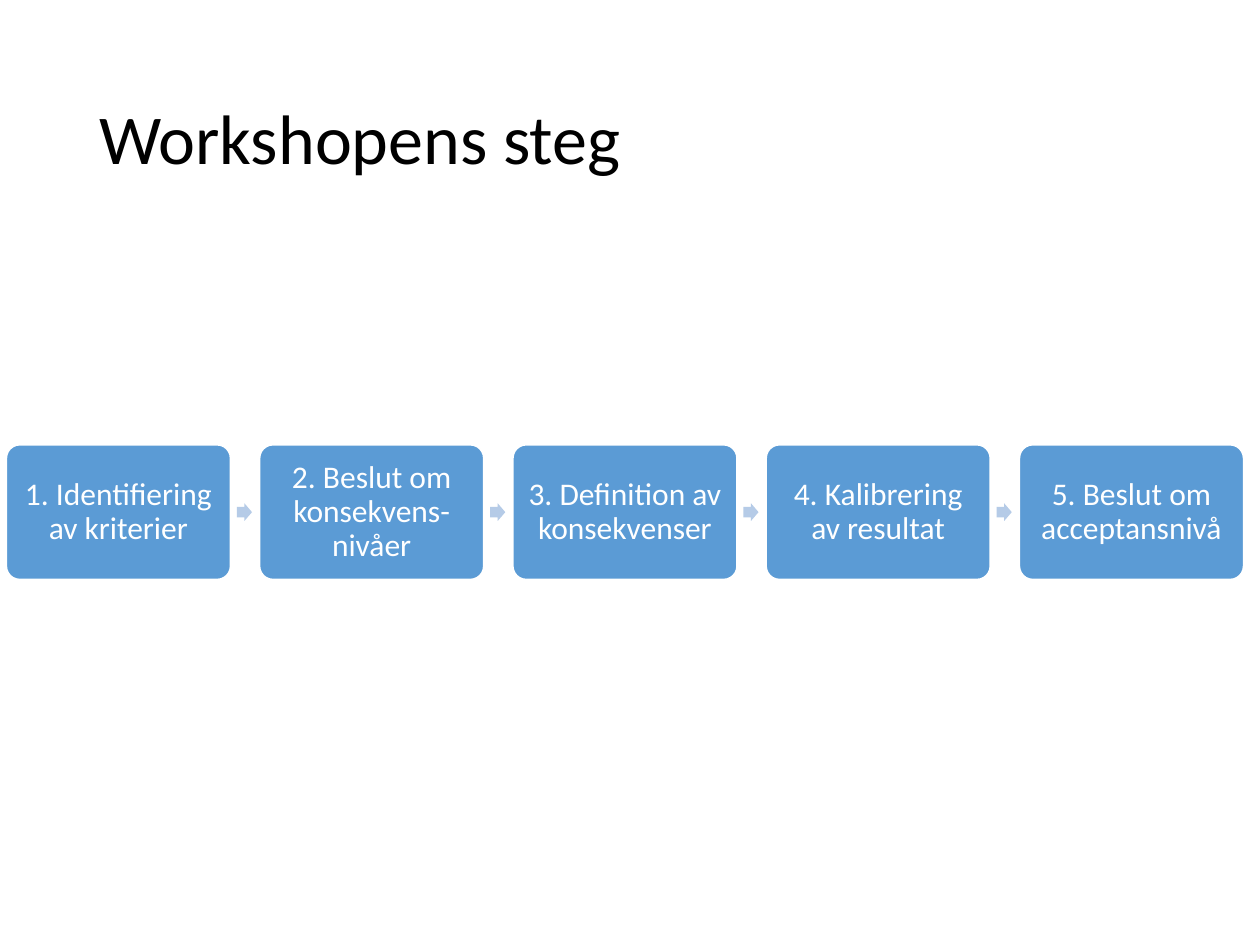
from pptx import Presentation
from pptx import util as u
from pptx.dml.color import RGBColor
from pptx.enum import shapes, text

STEPS = [
    "1. Identifiering av kriterier",
    "2. Beslut om konsekvens-nivåer",
    "3. Definition av konsekvenser",
    "4. Kalibrering av resultat",
    "5. Beslut om acceptansnivå",
]
LEFT, TOP, WIDTH, HEIGHT, PITCH = 0.05, 3.53, 1.78, 1.07, 2.01
ARROW_W, ARROW_H, ARROW_GAP = 0.12, 0.14, 0.05


def color(value):
    return RGBColor.from_string(value)


class Deck:
    font = "Calibri"
    ink = "000000"
    paper = "FFFFFF"
    box_fill = "5B9BD5"
    arrow_fill = "B5CBE7"

    def __init__(self, slide):
        self.slide = slide

    def add_text(self, sp, content, size, ink, align):
        tf = sp.text_frame
        tf.word_wrap = True
        tf.vertical_anchor = text.MSO_ANCHOR.MIDDLE
        p = tf.paragraphs[0]
        p.alignment = align
        p.line_spacing = 0.9
        r = p.add_run()
        r.text = content
        r.font.name = self.font
        r.font.size = u.Pt(size)
        r.font.color.rgb = color(ink)

    def title(self, content, *box):
        sp = self.slide.shapes.add_textbox(*map(u.Inches, box))
        self.add_text(sp, content, 40, self.ink, text.PP_ALIGN.LEFT)

    def shape(self, kind, fill, adjustments, box):
        sp = self.slide.shapes.add_shape(kind, *map(u.Inches, box))
        sp.shadow.inherit = False
        for i, value in enumerate(adjustments):
            sp.adjustments[i] = value
        sp.fill.solid()
        sp.fill.fore_color.rgb = color(fill)
        return sp

    def step(self, content, *box):
        sp = self.shape(shapes.MSO_SHAPE.ROUNDED_RECTANGLE, self.box_fill, [0.1], box)
        sp.line.color.rgb = color(self.paper)
        sp.line.width = u.Pt(1)
        tf = sp.text_frame
        tf.margin_left = tf.margin_right = u.Inches(0.07)
        tf.margin_top = tf.margin_bottom = u.Inches(0.07)
        self.add_text(sp, content, 18, self.paper, text.PP_ALIGN.CENTER)

    def arrow(self, *box):
        sp = self.shape(shapes.MSO_SHAPE.RIGHT_ARROW, self.arrow_fill, [0.6, 0.5], box)
        sp.line.fill.background()


def main():
    prs = Presentation()
    prs.slide_width, prs.slide_height = u.Inches(10), u.Inches(7.5)
    s = Deck(prs.slides.add_slide(prs.slide_layouts[6]))
    s.title("Workshopens steg", 0.69, 0.4, 8.62, 1.45)
    for i, content in enumerate(STEPS):
        x = LEFT + i * PITCH
        s.step(content, x, TOP, WIDTH, HEIGHT)
        if i < len(STEPS) - 1:
            s.arrow(x + WIDTH + ARROW_GAP, TOP + (HEIGHT - ARROW_H) / 2, ARROW_W, ARROW_H)
    prs.save("out.pptx")


if __name__ == "__main__":
    main()
